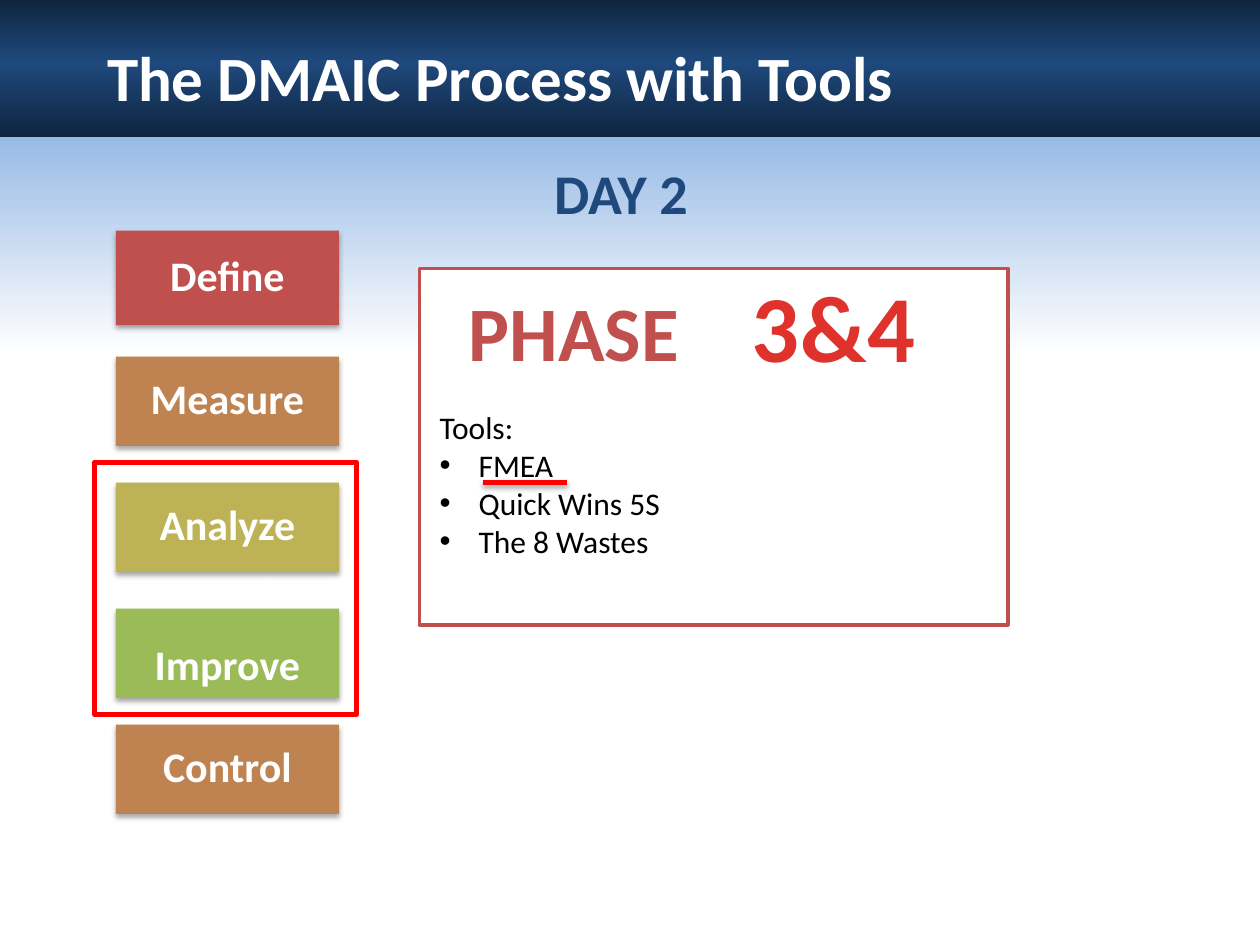
from lxml import etree
from pptx import Presentation
from pptx import util as u
from pptx.dml import color
from pptx.enum import shapes, text
from pptx.oxml import ns

Inches = u.Inches
RGB = color.RGBColor.from_string
theme = {
    "font": "Calibri",
    "white": "FFFFFF", "black": "000000", "navy": "1F497D",
    "red": "C0504D", "mark": "FF0000",
    "brown": "BE8351", "olive": "BDB255", "green": "9BBB59",
    "header": [(0, "0F243E"), (46, "1F497D"), (100, "0F243E")],
    "sky": [(0, "8EB4E3"), (29, "FFFFFF"), (100, "FFFFFF")],
    "number": [(25, "E0322D"), (100, "A2201C")],
    "sizes": {"title": 36, "day": 32, "step": 24, "phase": 44, "number": 54, "tools": 18},
}


def write(box, lines, role, ink, bold=True, align=text.PP_ALIGN.LEFT, **frame_format):
    frame = box.text_frame
    for name, value in frame_format.items():
        setattr(frame, name, value)
    frame.text = "\n".join(lines)
    font_format = {"name": theme["font"], "size": u.Pt(theme["sizes"][role]), "bold": bold}
    for para in frame.paragraphs:
        para.alignment = align
        for span in para.runs:
            for name, value in font_format.items():
                setattr(span.font, name, value)
            span.font.color.rgb = RGB(theme[ink])
    return frame.paragraphs


def blend(fill, holder, stops):
    fill.gradient()
    fill.gradient_angle = 270
    stop_list = holder.find(".//" + ns.qn("a:gsLst"))
    for stop in list(stop_list):
        stop_list.remove(stop)
    for position, ink in stops:
        stop = etree.SubElement(stop_list, ns.qn("a:gs"), pos=str(position * 1000))
        etree.SubElement(stop, ns.qn("a:srgbClr"), val=ink)


deck = Presentation()
deck.slide_width, deck.slide_height = Inches(10), Inches(7.5)
page = deck.slides.add_slide(deck.slide_layouts[5])
rectangle = shapes.MSO_SHAPE.RECTANGLE

for top, height, stops in [(0.92, 6.54, "sky"), (-0.01, 1.1, "header")]:
    band = page.shapes.add_shape(rectangle, Inches(-0.03), Inches(top), Inches(10.04), Inches(height))
    band.shadow.inherit = False
    band.line.fill.background()
    blend(band.fill, band.element.spPr, theme[stops])

title = page.shapes.title
title.element.getparent().append(title.element)
place = {"left": 0.75, "top": 0.25, "width": 9.17, "height": 0.71}
for name, value in place.items():
    setattr(title, name, Inches(value))
write(title, ["The DMAIC Process with Tools"], "title", "white")

shadowed = []
steps = [
    ("Define", 1.83, 0.75, "red"),
    ("Measure", 2.83, 0.71, "brown"),
    ("Analyze", 3.83, 0.71, "olive"),
    ("Improve", 4.83, 0.71, "green"),
    ("Control", 5.75, 0.71, "brown"),
]
for label, top, height, ink in steps:
    step = page.shapes.add_shape(rectangle, Inches(0.92), Inches(top), Inches(1.77), Inches(height))
    step.fill.solid()
    step.fill.fore_color.rgb = RGB(theme[ink])
    step.line.fill.background()
    step.shadow.inherit = False
    drop = 0.11 if label == "Improve" else 0
    para = write(step, [label], "step", "white", align=text.PP_ALIGN.CENTER,
                 vertical_anchor=text.MSO_ANCHOR.MIDDLE,
                 margin_left=Inches(0.2), margin_right=Inches(0.2),
                 margin_top=Inches(0.13 + drop), margin_bottom=Inches(0.13 - drop))[0]
    para.line_spacing = 0.9
    shadowed.append(step)

panel = page.shapes.add_group_shape()
card = panel.shapes.add_shape(rectangle, Inches(3.33), Inches(2.13), Inches(4.67), Inches(2.83))
card.shadow.inherit = False
card.fill.solid()
card.fill.fore_color.rgb = RGB(theme["white"])
card.line.color.rgb = RGB(theme["red"])
card.line.width = u.Pt(2)

number = panel.shapes.add_textbox(Inches(5.81), Inches(2.08), Inches(1.61), Inches(1.01))
span = write(number, ["3&4"], "number", "red", align=text.PP_ALIGN.CENTER, word_wrap=False)[0].runs[0]
blend(span.font.fill, number.element, theme["number"])
span.font._element.set("spc", "50")

phase = panel.shapes.add_textbox(Inches(3.39), Inches(2.21), Inches(2.33), Inches(0.84))
write(phase, ["PHASE"], "phase", "red", align=text.PP_ALIGN.CENTER, word_wrap=False)

tools = panel.shapes.add_textbox(Inches(3.39), Inches(3.19), Inches(4.52), Inches(2.22))
lines = ["Tools:", "FMEA", "Quick Wins 5S", "The 8 Wastes"]
for para in write(tools, lines, "tools", "black", bold=False, word_wrap=True)[1:]:
    settings = para._p.get_or_add_pPr()
    settings.set("marL", str(Inches(0.31)))
    settings.set("indent", str(-Inches(0.31)))
    etree.SubElement(settings, ns.qn("a:buFont"), typeface="Arial")
    etree.SubElement(settings, ns.qn("a:buChar"), char="•")

day = page.shapes.add_textbox(Inches(4.3), Inches(1.21), Inches(1.47), Inches(0.64))
write(day, ["DAY 2"], "day", "navy", word_wrap=False)

focus = page.shapes.add_shape(rectangle, Inches(0.75), Inches(3.67), Inches(2.08), Inches(2))
focus.shadow.inherit = False
focus.fill.background()
underline = page.shapes.add_connector(
    shapes.MSO_CONNECTOR.STRAIGHT, Inches(3.83), Inches(3.83), Inches(4.5), Inches(3.83))
for marker in (focus, underline):
    marker.line.color.rgb = RGB(theme["mark"])
    marker.line.width = u.Pt(3)
etree.SubElement(underline.element.spPr, ns.qn("a:effectLst"))
shadowed.append(underline)

for item in shadowed:
    effects = item.element.spPr.find(ns.qn("a:effectLst"))
    shadow = etree.SubElement(effects, ns.qn("a:outerShdw"), blurRad=str(u.Pt(3.1)),
                              dist=str(u.Pt(1.8)), dir="5400000", rotWithShape="0")
    ink = etree.SubElement(shadow, ns.qn("a:srgbClr"), val=theme["black"])
    etree.SubElement(ink, ns.qn("a:alpha"), val="35000")

deck.save("out.pptx")
